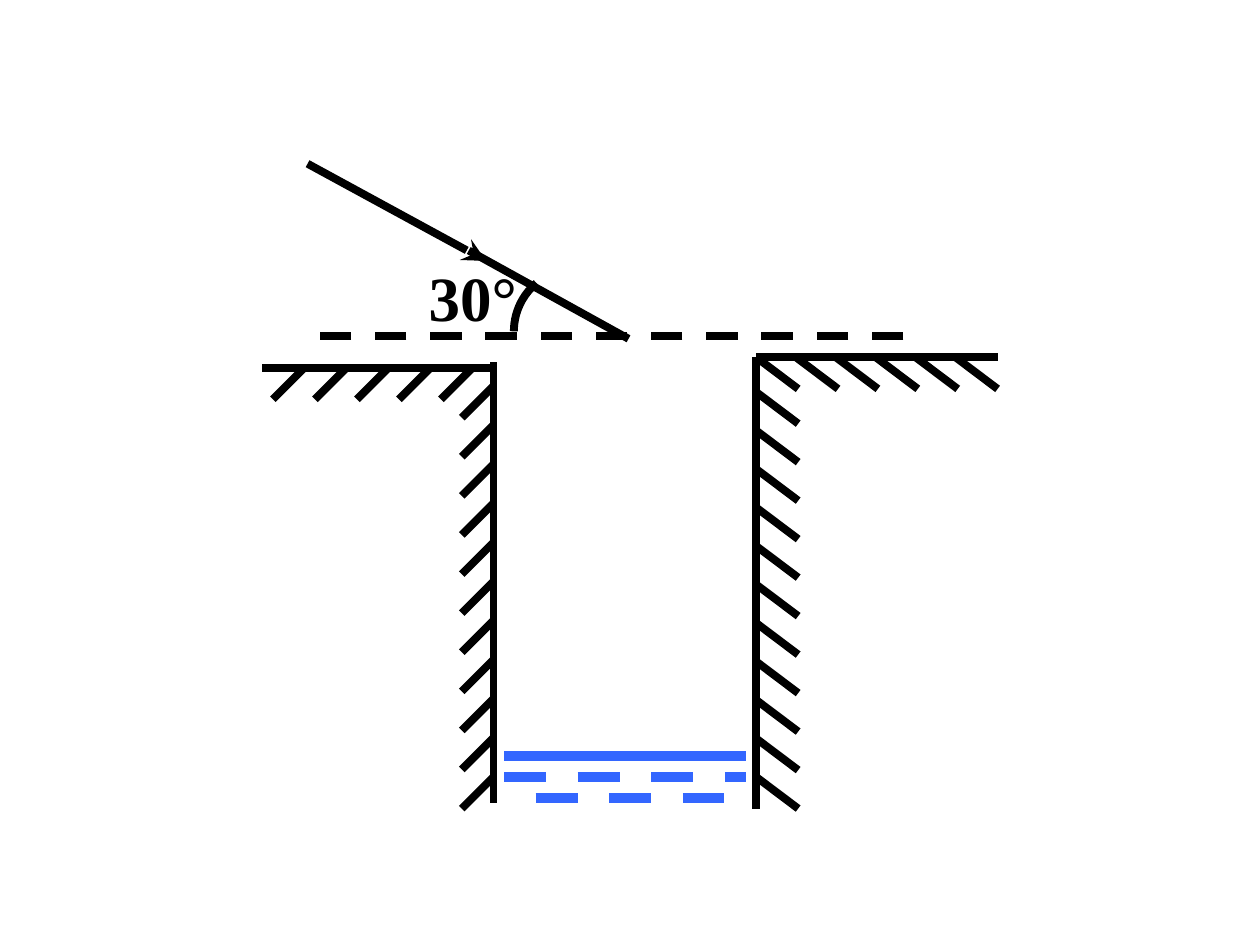
from lxml import etree
from pptx import Presentation
from pptx import util as u
from pptx.dml.color import RGBColor
from pptx.enum import dml, shapes, text
from pptx.oxml import ns

# Content: all lengths in centimetres, lines as (x1, y1, x2, y2)
BLACK, BLUE = "000000", "3366FF"
RAY_ARROW = (6.2, 3.3, 9.8, 5.26)
RAY_END = (9.45, 5.05, 12.67, 6.83)
HORIZON = (18.21, 6.78, 6.35, 6.78)
ANGLE = {"center": (11.63, 6.68), "radius": 1.27, "from": 180, "to": 230}
LABEL = {"text": "30°", "box": (7.62, 5.08, 3.05, 1.78)}
LABEL_FONT = {"name": "Times New Roman", "size": u.Pt(36), "bold": True}

# Hatch marks: first and last start point, number of marks
WALLS = [
    {"outline": [(5.29, 7.41, 9.95, 7.41), (9.95, 7.3, 9.95, 16.19)],
     "slant": (-0.64, 0.64),
     "hatches": [((6.14, 7.41), (9.53, 7.41), 5),
                 ((9.95, 7.78), (9.95, 15.66), 11)]},
    {"outline": [(20.11, 7.2, 15.24, 7.2), (15.24, 7.2, 15.24, 16.3)],
     "slant": (0.85, 0.64),
     "hatches": [((15.24, 7.2), (19.26, 7.2), 6),
                 ((15.24, 7.9), (15.24, 15.66), 11)]},
]
WATER = [((10.16, 15.24, 15.03, 15.24), False),
         ((10.16, 15.66, 15.03, 15.66), True),
         ((10.8, 16.09, 14.6, 16.09), True)]


def color(value):
    return RGBColor.from_string(value)


def add_line(parent, points, ink=BLACK, width=4.5, dashed=False, arrow=False):
    line = parent.shapes.add_connector(
        shapes.MSO_CONNECTOR.STRAIGHT, *(u.Cm(value) for value in points))
    line.line.color.rgb = color(ink)
    line.line.width = u.Pt(width)
    if dashed:
        line.line.dash_style = dml.MSO_LINE.DASH
    if arrow:
        tail = etree.SubElement(line.line._get_or_add_ln(), ns.qn("a:tailEnd"))
        tail.set("type", "stealth")
    etree.SubElement(line._element.spPr, ns.qn("a:effectLst"))


def hatch_lines(first, last, count, slant):
    for index in range(count):
        x, y = (a + (b - a) * index / (count - 1) for a, b in zip(first, last))
        yield x, y, x + slant[0], y + slant[1]


deck = Presentation()
deck.slide_width, deck.slide_height = u.Cm(25.4), u.Cm(19.05)
page = deck.slides.add_slide(deck.slide_layouts[6])

# Light ray and horizontal reference
ray = page.shapes.add_group_shape()
add_line(ray, RAY_ARROW, arrow=True)
add_line(ray, RAY_END)
add_line(page, HORIZON, dashed=True)

# Angle arc and its label
radius = ANGLE["radius"]
left, top = (value - radius for value in ANGLE["center"])
arc = page.shapes.add_shape(
    shapes.MSO_SHAPE.ARC, u.Cm(left), u.Cm(top), u.Cm(2 * radius), u.Cm(2 * radius))
for index, key in enumerate(("from", "to")):
    arc.adjustments[index] = ANGLE[key] * 0.6  # 60000ths of a degree / 100000
arc.shadow.inherit = False
arc.fill.background()
arc.line.color.rgb = color(BLACK)
arc.line.width = u.Pt(4.5)

box = page.shapes.add_textbox(*(u.Cm(value) for value in LABEL["box"]))
box.text_frame.word_wrap = False
box.text_frame.auto_size = text.MSO_AUTO_SIZE.SHAPE_TO_FIT_TEXT
para = box.text_frame.paragraphs[0]
para.alignment = text.PP_ALIGN.RIGHT
span = para.add_run()
span.text = LABEL["text"]
span.font.color.rgb = color(BLACK)
for name, value in LABEL_FONT.items():
    setattr(span.font, name, value)

# Well walls with hatching
for wall in WALLS:
    group = page.shapes.add_group_shape()
    for points in wall["outline"]:
        add_line(group, points)
    for first, last, count in wall["hatches"]:
        for points in hatch_lines(first, last, count, wall["slant"]):
            add_line(group, points)

# Water at the bottom
water = page.shapes.add_group_shape()
for points, dashed in WATER:
    add_line(water, points, BLUE, 6, dashed)

deck.save("out.pptx")
